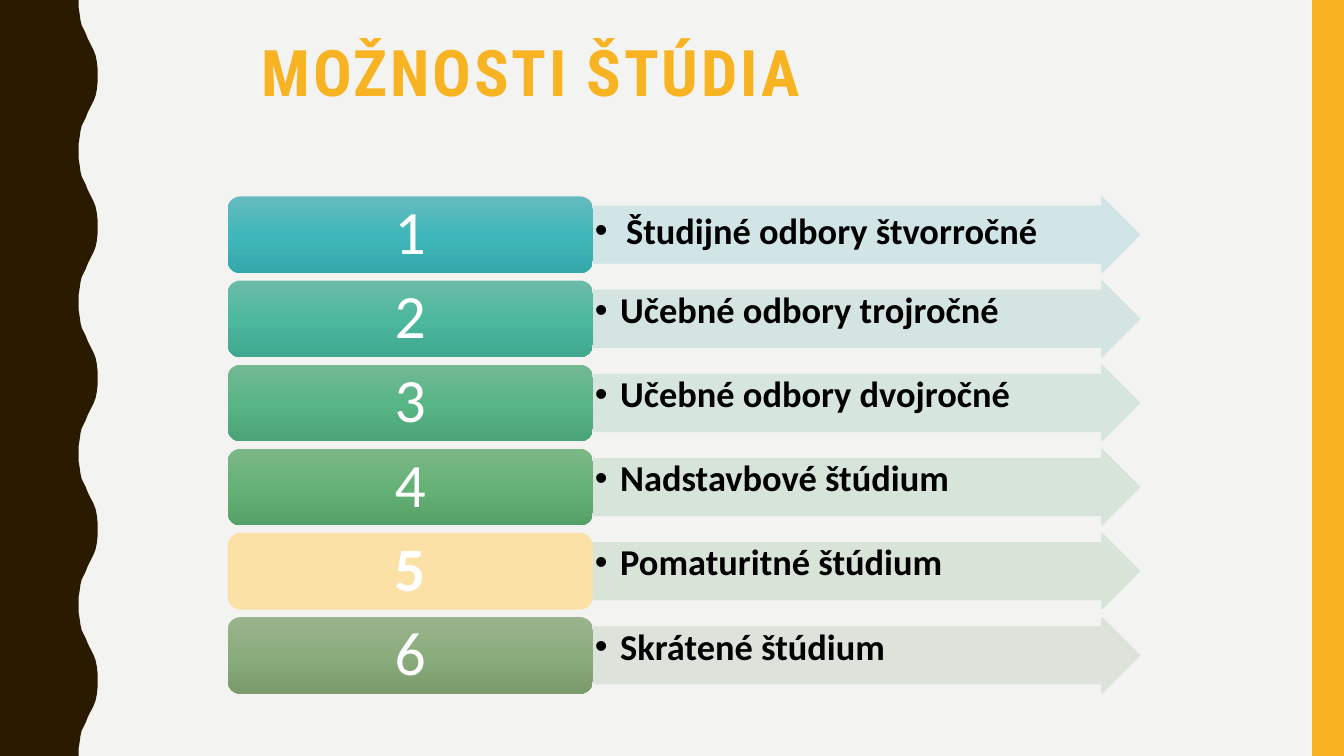
import copy

import pptx
import pptx.dml.color
import pptx.enum.shapes
import pptx.enum.text
import pptx.oxml
import pptx.oxml.ns
import pptx.util

Cm = pptx.util.Cm
Pt = pptx.util.Pt
RGB = pptx.dml.color.RGBColor.from_string
qn = pptx.oxml.ns.qn
Shape = pptx.enum.shapes.MSO_SHAPE
Anchor = pptx.enum.text.MSO_ANCHOR
Align = pptx.enum.text.PP_ALIGN

THEME = {
    "background": "F3F3F2",
    "wave": "2A1A00",
    "accent": "F8B323",
    "label": "000000",
    "number": "FFFFFF",
    "title_font": "Roboto Condensed",
    "body_font": "Calibri",
    "title_size": 45.9,
    "label_size": 26,
    "number_size": 44,
}

OPTIONS = [
    ("Študijné odbory štvorročné", "CFE4E5", ["64BBBE", "40B7BB", "34A8AB"]),
    ("Učebné odbory trojročné", "D1E4E0", ["6BBCA7", "4CB89E", "3FA88F"]),
    ("Učebné odbory dvojročné", "D3E4DB", ["73B994", "58B585", "4BA477"]),
    ("Nadstavbové štúdium", "D4E3D8", ["7CB788", "65B176", "56A167"]),
    ("Pomaturitné štúdium", "D6E3D6", ["FCE1A7"]),
    ("Skrátené štúdium", "DBE2D8", ["9AB48E", "8BAC7C", "7B9B6C"]),
]

HALF_WAVE = [
    (1.98, 0), (1.98, 0.18), (2.01, 0.36), (2.03, 0.51), (2.06, 0.64),
    (2.11, 0.74), (2.16, 0.84), (2.21, 0.97), (2.26, 1.07), (2.31, 1.17),
    (2.36, 1.27), (2.41, 1.4), (2.44, 1.55), (2.46, 1.73), (2.46, 1.91),
]
WAVE_PERIOD = 3.81
SLIDE_WIDTH, SLIDE_HEIGHT = 33.87, 19.05
ROW_TOP, ROW_PITCH, ROW_HEIGHT = 4.95, 2.12, 1.93


def style_shape(shape, color):
    shape.shadow.inherit = False
    shape.fill.solid()
    shape.fill.fore_color.rgb = RGB(color)
    shape.line.fill.background()


def write_text(shape, text, frame_format, para_format, font_format, color):
    frame = shape.text_frame
    for name, value in {"word_wrap": True, **frame_format}.items():
        setattr(frame, name, value)
    para = frame.paragraphs[0]
    for name, value in para_format.items():
        setattr(para, name, value)
    span = para.add_run()
    span.text = text
    for name, value in font_format.items():
        setattr(span.font, name, value)
    span.font.color.rgb = RGB(color)
    return para


deck = pptx.Presentation()
deck.slide_width = Cm(SLIDE_WIDTH)
deck.slide_height = Cm(SLIDE_HEIGHT)
page = deck.slides.add_slide(deck.slide_layouts[6])
page.background.fill.solid()
page.background.fill.fore_color.rgb = RGB(THEME["background"])

full_wave = HALF_WAVE + [(x, WAVE_PERIOD - y) for x, y in HALF_WAVE[-2::-1]]
edge = [(x, y + WAVE_PERIOD * turn) for turn in range(5) for x, y in full_wave]
outline = page.shapes.build_freeform(0, 0)
outline.add_line_segments([(Cm(x), Cm(y)) for x, y in edge + [(0, SLIDE_HEIGHT)]], close=True)
style_shape(outline.convert_to_shape(), THEME["wave"])

stripe = page.shapes.add_shape(Shape.RECTANGLE, Cm(33.07), 0, Cm(0.8), Cm(SLIDE_HEIGHT))
style_shape(stripe, THEME["accent"])

title = page.shapes.add_textbox(Cm(6.35), Cm(0.91), Cm(22.43), Cm(3.2))
title_para = write_text(
    title, "MOŽNOSTI ŠTÚDIA",
    {"vertical_anchor": Anchor.TOP},
    {"line_spacing": 0.9},
    {"name": THEME["title_font"], "size": Pt(THEME["title_size"]), "bold": True},
    THEME["accent"],
)
title_para.runs[0].font._element.set("spc", "200")

margins = ("margin_left", "margin_right", "margin_top", "margin_bottom")
label_frame = {"vertical_anchor": Anchor.TOP, **dict.fromkeys(margins, Cm(0.05))}
number_frame = {"vertical_anchor": Anchor.MIDDLE, **dict.fromkeys(margins, Cm(0.23))}

for index, (label, arrow_color, box_colors) in enumerate(OPTIONS):
    top = Cm(ROW_TOP + ROW_PITCH * index)
    first = index == 0

    arrow = page.shapes.add_shape(Shape.RIGHT_ARROW, Cm(14.94), top, Cm(13.79), Cm(ROW_HEIGHT))
    arrow.adjustments[0] = 0.75
    arrow.adjustments[1] = 0.5
    style_shape(arrow, arrow_color)
    arrow.line.color.rgb = RGB(arrow_color)
    arrow.line.width = Pt(0.5)
    for color in arrow._element.spPr.iter(qn("a:srgbClr")):
        color.append(pptx.oxml.parse_xml(
            f'<a:alpha {pptx.oxml.ns.nsdecls("a")} val="90000"/>'))
    label_para = write_text(
        arrow, label, label_frame,
        {"alignment": Align.LEFT, "line_spacing": 1.0 if first else 0.9},
        {"name": THEME["body_font"], "size": Pt(THEME["label_size"]), "bold": True},
        THEME["label"],
    )
    indent = Cm(0.79 if first else 0.64)
    properties = label_para._p.get_or_add_pPr()
    properties.set("marL", str(indent))
    properties.set("indent", str(-indent))
    for tag, attribute, value in (("buFont", "typeface", "Arial"), ("buChar", "char", "•")):
        properties.append(pptx.oxml.parse_xml(
            f'<a:{tag} {pptx.oxml.ns.nsdecls("a")} {attribute}="{value}"/>'))

    box = page.shapes.add_shape(Shape.ROUNDED_RECTANGLE, Cm(5.74), top, Cm(9.2), Cm(ROW_HEIGHT))
    style_shape(box, box_colors[0])
    plain = len(box_colors) == 1
    if not plain:
        box.fill.gradient()
        box.fill.gradient_angle = 270
        stop_list = next(box._element.spPr.iter(qn("a:gsLst")))
        stop_list.append(copy.deepcopy(stop_list[0]))
        for place, (stop, color) in enumerate(zip(box.fill.gradient_stops, box_colors)):
            stop.position = place / 2
            stop.color.rgb = RGB(color)
    write_text(
        box, str(index + 1), number_frame,
        {"alignment": Align.CENTER, "line_spacing": 0.9},
        {"name": THEME["body_font"], "size": Pt(THEME["number_size"]), "bold": plain},
        THEME["number"],
    )

deck.save("out.pptx")
